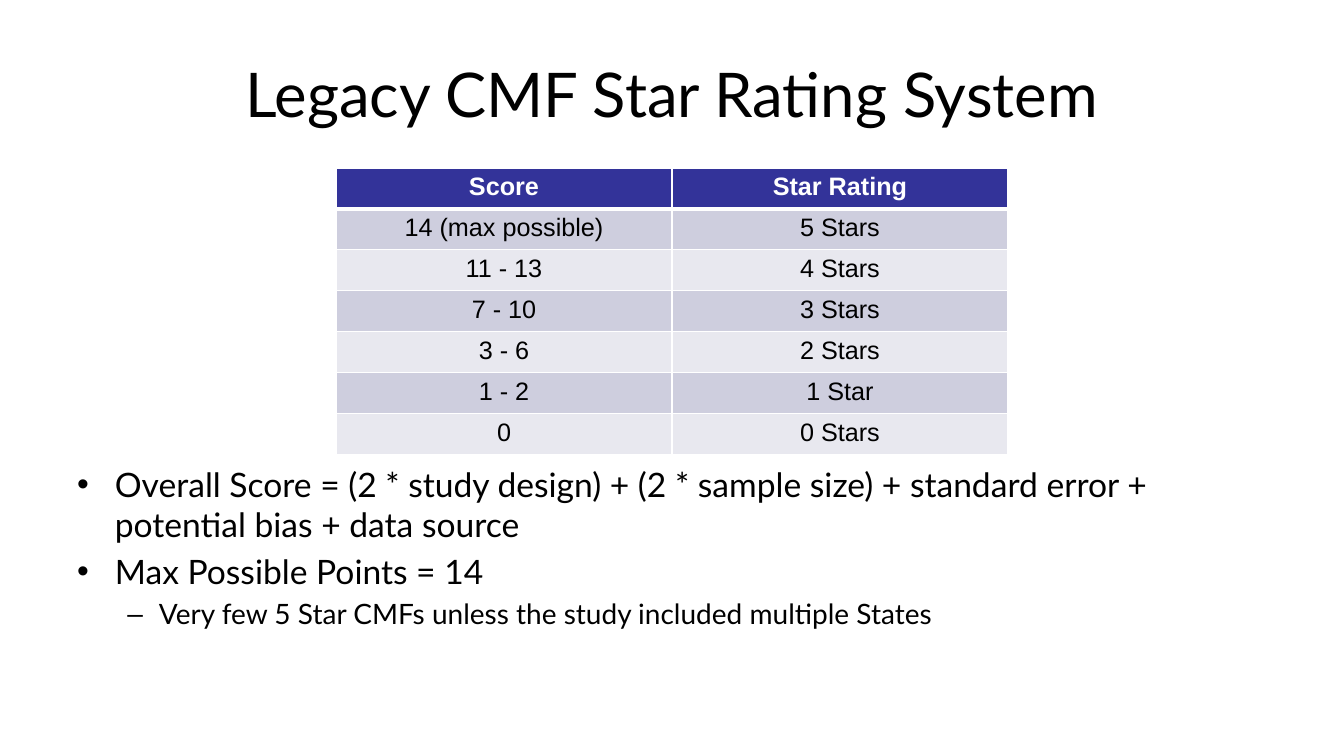
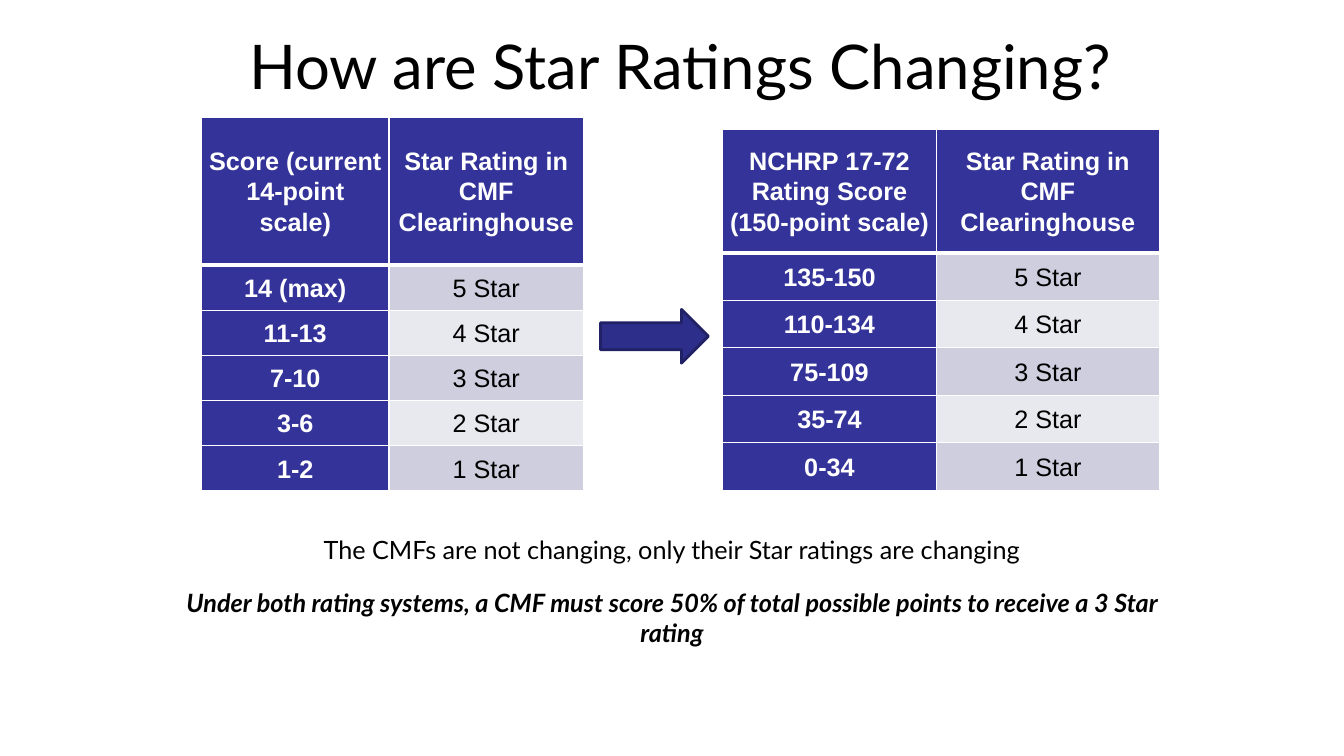
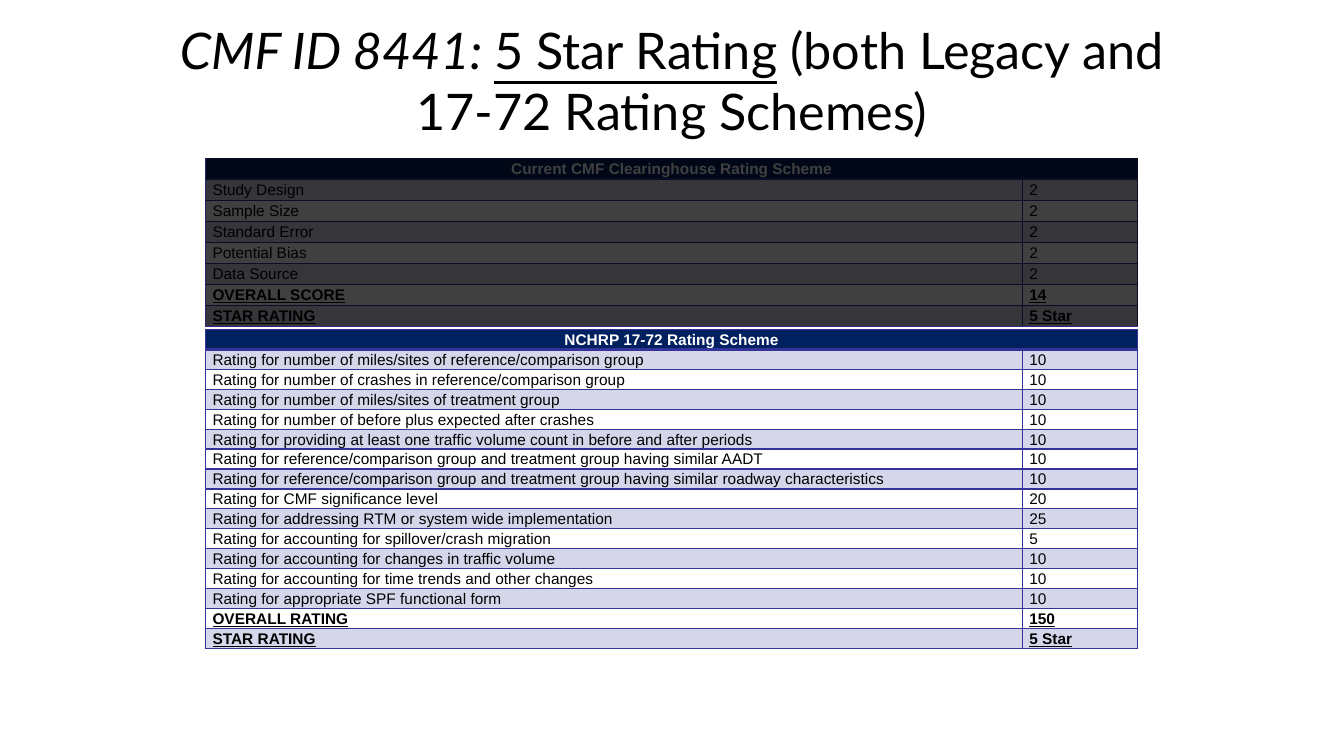
from dataclasses import dataclass

from lxml import etree
from pptx import Presentation
from pptx.dml.color import RGBColor
from pptx.enum.shapes import MSO_SHAPE
from pptx.enum.text import MSO_ANCHOR, PP_ALIGN
from pptx.oxml.ns import qn
from pptx.util import Pt

LEFT, CENTER = PP_ALIGN.LEFT, PP_ALIGN.CENTER
TOP, MIDDLE = MSO_ANCHOR.TOP, MSO_ANCHOR.MIDDLE
RECTANGLE, RIGHT_ARROW = MSO_SHAPE.RECTANGLE, MSO_SHAPE.RIGHT_ARROW

COLORS = {
    "text": "000000",
    "white": "FFFFFF",
    "indigo": "333399",
    "navy": "002060",
    "band": "CECEDE",
    "pale_band": "E8E8EF",
    "lilac": "D6D6EB",
    "arrow": "2D2D8A",
    "arrow_edge": "212166",
}
BODY_FONT, TABLE_FONT = "Lato", "Arial"

STAR_SCORES = [
    ("Score", "Star Rating"),
    ("14 (max possible)", "5 Stars"),
    ("11 - 13", "4 Stars"),
    ("7 - 10", "3 Stars"),
    ("3 - 6", "2 Stars"),
    ("1 - 2", "1 Star"),
    ("0", "0 Stars"),
]
SCORE_BULLETS = [
    ("Overall Score = (2 * study design) + (2 * sample size) + standard error"
     " + potential bias + data source", 0),
    ("Max Possible Points = 14", 0),
    ("Very few 5 Star CMFs unless the study included multiple States", 1),
]
BULLET_LEVELS = [("•", 27, 27, 24), ("–", 58.5, 22.5, 20)]
STAR_HEADING = "Star Rating in CMF Clearinghouse"
CURRENT_RANGES = ["14 (max)", "11-13", "7-10", "3-6", "1-2"]
NEW_RANGES = ["135-150", "110-134", "75-109", "35-74", "0-34"]
CURRENT_SCHEME = [
    ("Current CMF Clearinghouse Rating Scheme", ""),
    ("Study Design", "2"),
    ("Sample Size", "2"),
    ("Standard Error", "2"),
    ("Potential Bias", "2"),
    ("Data Source", "2"),
    ("OVERALL SCORE", "14"),
    ("STAR RATING", "5 Star"),
]
NEW_SCHEME = [
    ("NCHRP 17-72 Rating Scheme", ""),
    ("Rating for number of miles/sites of reference/comparison group", "10"),
    ("Rating for number of crashes in reference/comparison group", "10"),
    ("Rating for number of miles/sites of treatment group", "10"),
    ("Rating for number of before plus expected after crashes", "10"),
    ("Rating for providing at least one traffic volume count in before and after periods", "10"),
    ("Rating for reference/comparison group and treatment group having similar AADT", "10"),
    ("Rating for reference/comparison group and treatment group having similar"
     " roadway characteristics", "10"),
    ("Rating for CMF significance level", "20"),
    ("Rating for addressing RTM or system wide implementation", "25"),
    ("Rating for accounting for spillover/crash migration", "5"),
    ("Rating for accounting for changes in traffic volume", "10"),
    ("Rating for accounting for time trends and other changes", "10"),
    ("Rating for appropriate SPF functional form", "10"),
    ("OVERALL RATING", "150"),
    ("STAR RATING", "5 Star"),
]


@dataclass
class GridStyle:
    """Look of one kind of table."""

    header: str
    bands: tuple
    border: str
    header_rule: float
    size: float = 18
    spacing: float = 1.07
    margins: tuple = (4.5, 0)
    anchor: object = MIDDLE
    align: object = CENTER
    strong_column: bool = False
    total_rows: int = 0
    merged_header: bool = False


STAR_BANDS = ("band", "pale_band")
SCORE_STYLE = GridStyle("indigo", STAR_BANDS, "white", 3, spacing=1, margins=(7.2, 3.6), anchor=TOP)
RANGE_STYLE = GridStyle("indigo", STAR_BANDS, "white", 3, strong_column=True)
SCHEME_STYLE = GridStyle("navy", ("lilac", "white"), "indigo", 2, size=11, margins=(5, 0),
                         align=LEFT, total_rows=2, merged_header=True)


def rgb(name):
    """Return the named colour."""
    return RGBColor.from_string(COLORS[name])


def points(box):
    """Turn a box of plain numbers into lengths."""
    return [Pt(value) for value in box]


def write(para, text, size=18, font=BODY_FONT, color="text", bold=False, italic=False,
          underline=False, align=LEFT):
    """Add a formatted span to a paragraph."""
    para.alignment = align
    span = para.add_run()
    span.text = text
    span.font.size, span.font.name = Pt(size), font
    span.font.bold, span.font.italic, span.font.underline = bold, italic, underline
    span.font.color.rgb = rgb(color)


def add_box(page, box, anchor=TOP):
    """Add a wrapping text box and return its frame."""
    frame = page.shapes.add_textbox(*points(box)).text_frame
    frame.word_wrap = True
    frame.vertical_anchor = anchor
    return frame


def add_line(page, box, text, **style):
    """Add a centred text box with one paragraph."""
    write(add_box(page, box).paragraphs[0], text, align=CENTER, **style)


def add_title(page, box, *parts, size=44):
    """Add a centred title made of text and format pairs."""
    para = add_box(page, box, MIDDLE).paragraphs[0]
    for text, style in parts:
        write(para, text, size=size, align=CENTER, **style)


def add_bullets(page, box, items):
    """Add a list of bulleted paragraphs."""
    frame = add_box(page, box)
    for index, (text, level) in enumerate(items):
        mark, margin, hang, size = BULLET_LEVELS[level]
        para = frame.add_paragraph() if index else frame.paragraphs[0]
        props = para._p.get_or_add_pPr()
        props.set("marL", str(Pt(margin)))
        props.set("indent", str(-Pt(hang)))
        etree.SubElement(props, qn("a:buFont"), typeface="Arial")
        etree.SubElement(props, qn("a:buChar"), char=mark)
        if index:
            para.space_before = Pt(size * 0.2)
        write(para, text, size=size)


def set_borders(cell, color, widths):
    """Draw the left, right, top and bottom borders of a cell."""
    props = cell._tc.get_or_add_tcPr()
    for side, width in zip("LRTB", widths):
        line = etree.SubElement(props, qn(f"a:ln{side}"), w=str(Pt(width)))
        fill = etree.SubElement(line, qn("a:solidFill"))
        etree.SubElement(fill, qn("a:srgbClr"), val=COLORS[color])


def format_cell(cell, text, row, column, row_count, style):
    """Fill, border and write one cell by its place in the grid."""
    strong = row == 0 or (style.strong_column and column == 0)
    total = row >= row_count - style.total_rows
    top = style.header_rule if row == 1 else 1
    bottom = style.header_rule if row == 0 else 1
    set_borders(cell, style.border, (1, 1, top, bottom))
    cell.fill.solid()
    cell.fill.fore_color.rgb = rgb(style.header if strong else style.bands[(row - 1) % 2])
    cell.vertical_anchor = style.anchor
    side, edge = style.margins
    cell.margin_left = cell.margin_right = Pt(side)
    cell.margin_top = cell.margin_bottom = Pt(edge)
    para = cell.text_frame.paragraphs[0]
    para.line_spacing = style.spacing
    if text:
        write(para, text, size=style.size, font=TABLE_FONT, color="white" if strong else "text",
              bold=strong or total, underline=total, align=CENTER if row == 0 else style.align)


def add_grid(page, box, first_column, rows, style, header_height=None):
    """Add a two-column table that fills the box."""
    left, top, width, height = box
    header_height = header_height or height / len(rows)
    row_height = (height - header_height) / (len(rows) - 1)
    table = page.shapes.add_table(len(rows), 2, *points(box)).table
    table.first_row = table.horz_banding = False
    table.columns[0].width = Pt(first_column)
    table.columns[1].width = Pt(width - first_column)
    for row, texts in enumerate(rows):
        table.rows[row].height = Pt(row_height if row else header_height)
        for column, text in enumerate(texts):
            format_cell(table.cell(row, column), text, row, column, len(rows), style)
    if style.merged_header:
        table.cell(0, 0).merge(table.cell(0, 1))


def add_shape(page, kind, box, fill, edge=None, opacity=100):
    """Add a filled shape without shadow."""
    shape = page.shapes.add_shape(kind, *points(box))
    shape.shadow.inherit = False
    shape.fill.solid()
    shape.fill.fore_color.rgb = rgb(fill)
    if opacity < 100:
        color = shape._element.spPr.find(qn("a:solidFill"))[0]
        etree.SubElement(color, qn("a:alpha"), val=str(opacity * 1000))
    if edge:
        shape.line.color.rgb = rgb(edge)
        shape.line.width = Pt(2)
    else:
        shape.line.fill.background()


def star_rows(heading, ranges):
    """Pair score ranges with falling star counts under a heading."""
    stars = [f"{count} Star" for count in range(len(ranges), 0, -1)]
    return [(heading, STAR_HEADING), *zip(ranges, stars)]


def build_legacy_page(page):
    """Show the legacy scores and how they add up."""
    add_title(page, (48, 21.6, 864, 90), ("Legacy CMF Star Rating System", {}))
    add_bullets(page, (48, 327.6, 864, 154.8), SCORE_BULLETS)
    add_grid(page, (240, 120, 480, 204.4), 240, STAR_SCORES, SCORE_STYLE)


def build_change_page(page):
    """Set the current ranges beside the new ones."""
    add_title(page, (144, 12, 684, 68.4), ("How are Star Ratings Changing?", {}))
    add_grid(page, (516, 92.4, 312, 257.8), 153, star_rows(
        "NCHRP 17-72 Rating Score (150-point scale)", NEW_RANGES), RANGE_STYLE, 88.2)
    add_grid(page, (144, 83.8, 272.8, 267), 133.8, star_rows(
        "Score (current 14-point scale)", CURRENT_RANGES), RANGE_STYLE, 105.6)
    add_shape(page, RIGHT_ARROW, (429, 221, 77, 38.4), "arrow", "arrow_edge")
    add_line(page, (120, 378, 720, 29), "The CMFs are not changing, only their Star ratings are changing")
    add_line(page, (120, 416, 720, 51), "Under both rating systems, a CMF must score 50% of total"
             " possible points to receive a 3 Star rating", bold=True, italic=True)


def build_example_page(page):
    """Rate one CMF by both schemes, with the current one dimmed."""
    add_title(page, (120, 12, 720, 90), ("CMF ID 8441: ", {"italic": True}),
              ("5 Star Rating", {"underline": True}),
              (" (both Legacy and 17-72 Rating Schemes)", {}), size=36)
    current_box = (146.8, 113, 666, 120)
    add_grid(page, current_box, 583.4, CURRENT_SCHEME, SCHEME_STYLE)
    add_grid(page, (146.8, 235.4, 666, 228), 583.4, NEW_SCHEME, SCHEME_STYLE)
    add_shape(page, RECTANGLE, current_box, "text", opacity=75)


def main():
    """Build and save the deck."""
    deck = Presentation()
    deck.slide_width, deck.slide_height = Pt(960), Pt(540)
    for build in (build_legacy_page, build_change_page, build_example_page):
        build(deck.slides.add_slide(deck.slide_layouts[6]))
    deck.save("out.pptx")


if __name__ == "__main__":
    main()
